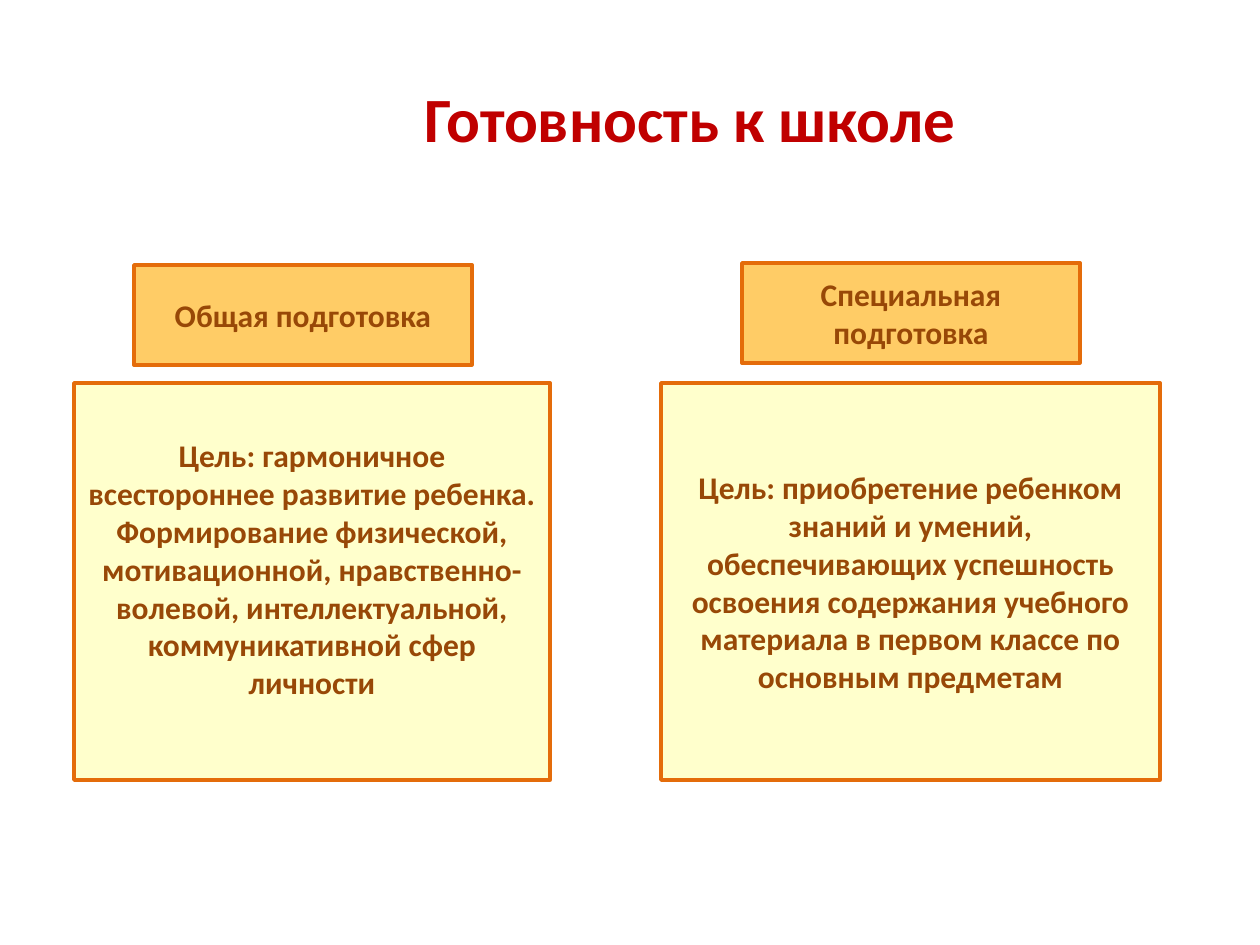
from dataclasses import dataclass

from pptx import Presentation
from pptx.dml.color import RGBColor
from pptx.enum.shapes import MSO_SHAPE
from pptx.enum.text import MSO_ANCHOR, PP_ALIGN
from pptx.util import Emu, Inches, Pt

RECTANGLE = MSO_SHAPE.RECTANGLE
MIDDLE = MSO_ANCHOR.MIDDLE
CENTER = PP_ALIGN.CENTER
PX = Inches(1) / 126


@dataclass(frozen=True)
class Theme:
    font: str = "Calibri"
    title_color: str = "C00000"
    text_color: str = "984807"
    border_color: str = "E46C0A"
    heading_fill: str = "FFCC66"
    goal_fill: str = "FFFFCC"
    title_size: int = 36
    text_size: int = 18
    border_width: int = 2


def px(length):
    return Emu(round(length * PX))


class Board:
    def __init__(self, slide, theme):
        self.slide = slide
        self.theme = theme

    def add_text(self, frame, paragraphs, size, color):
        frame.word_wrap = True
        frame.vertical_anchor = MIDDLE
        for index, text in enumerate(paragraphs):
            paragraph = frame.add_paragraph() if index else frame.paragraphs[0]
            paragraph.alignment = CENTER
            run = paragraph.add_run()
            run.text = text
            run.font.name = self.theme.font
            run.font.size = Pt(size)
            run.font.bold = True
            run.font.color.rgb = RGBColor.from_string(color)

    def title(self, area, text):
        heading = self.slide.shapes.add_textbox(*map(px, area))
        self.add_text(heading.text_frame, [text],
                      self.theme.title_size, self.theme.title_color)

    def panel(self, area, paragraphs, fill, bottom_inset=6):
        panel = self.slide.shapes.add_shape(RECTANGLE, *map(px, area))
        panel.shadow.inherit = False
        panel.fill.solid()
        panel.fill.fore_color.rgb = RGBColor.from_string(fill)
        panel.line.color.rgb = RGBColor.from_string(self.theme.border_color)
        panel.line.width = Pt(self.theme.border_width)
        panel.text_frame.margin_bottom = px(bottom_inset)
        self.add_text(panel.text_frame, paragraphs,
                      self.theme.text_size, self.theme.text_color)

    def heading(self, left, top, text):
        self.panel((left, top, 338, 100), [text], self.theme.heading_fill)

    def goal(self, left, width, paragraphs, bottom_inset=6):
        self.panel((left, 383, width, 397), paragraphs,
                   self.theme.goal_fill, bottom_inset)


def main():
    presentation = Presentation()
    presentation.slide_width = Inches(10)
    presentation.slide_height = Inches(7.5)
    slide = presentation.slides.add_slide(presentation.slide_layouts[6])
    board = Board(slide, Theme())

    board.heading(134, 265, "Общая подготовка")
    board.heading(742, 263, "Специальная подготовка")
    board.goal(74, 476, [
        "Цель: гармоничное всестороннее развитие ребенка.",
        "Формирование физической, мотивационной, нравственно-волевой, "
        "интеллектуальной, коммуникативной сфер личности",
    ], bottom_inset=32)
    board.goal(661, 499, [
        "Цель: приобретение ребенком знаний и умений, обеспечивающих "
        "успешность освоения содержания учебного материала в первом классе "
        "по основным предметам",
    ])
    board.title((184, 38, 1013, 158), "Готовность к школе")
    presentation.save("out.pptx")


if __name__ == "__main__":
    main()
